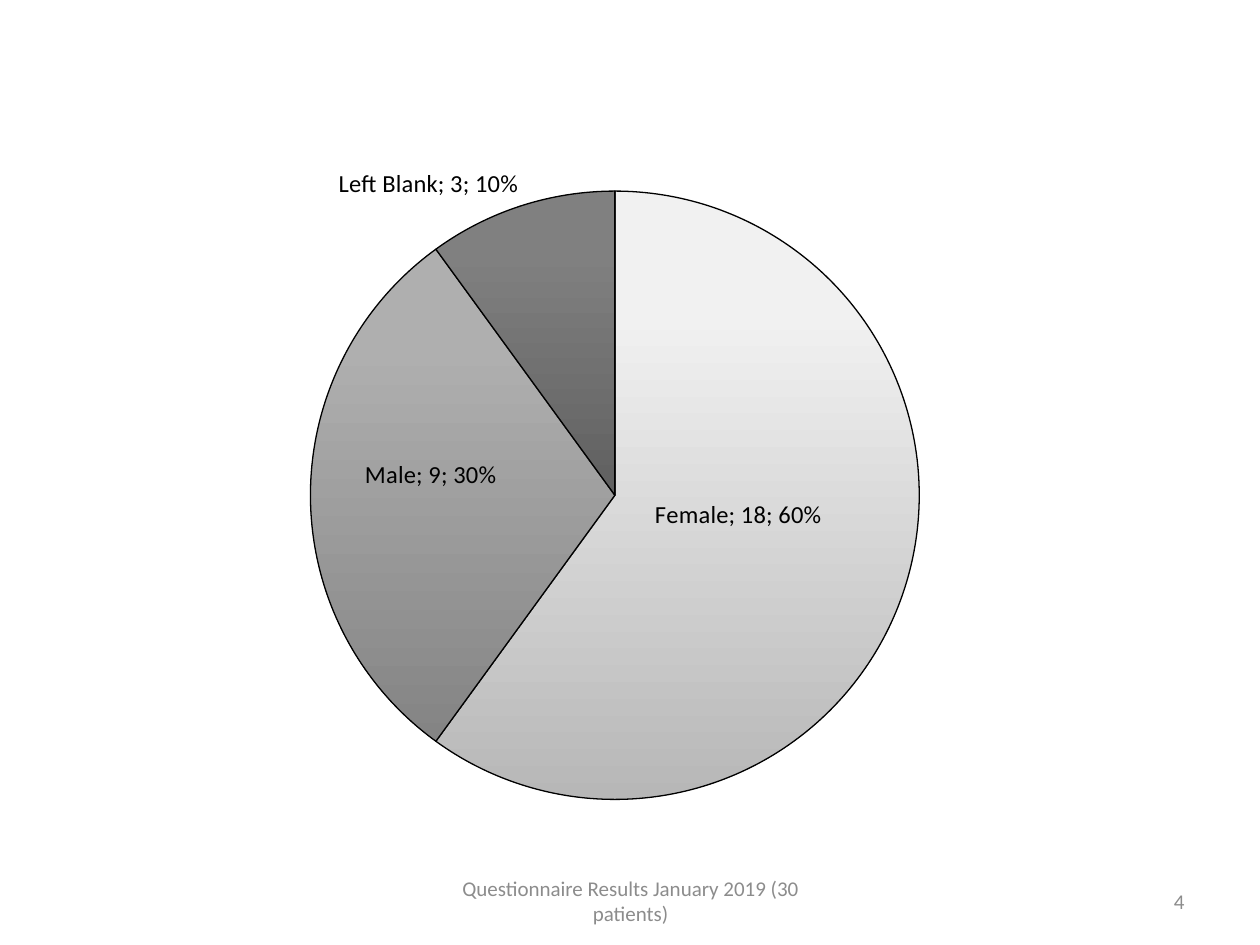
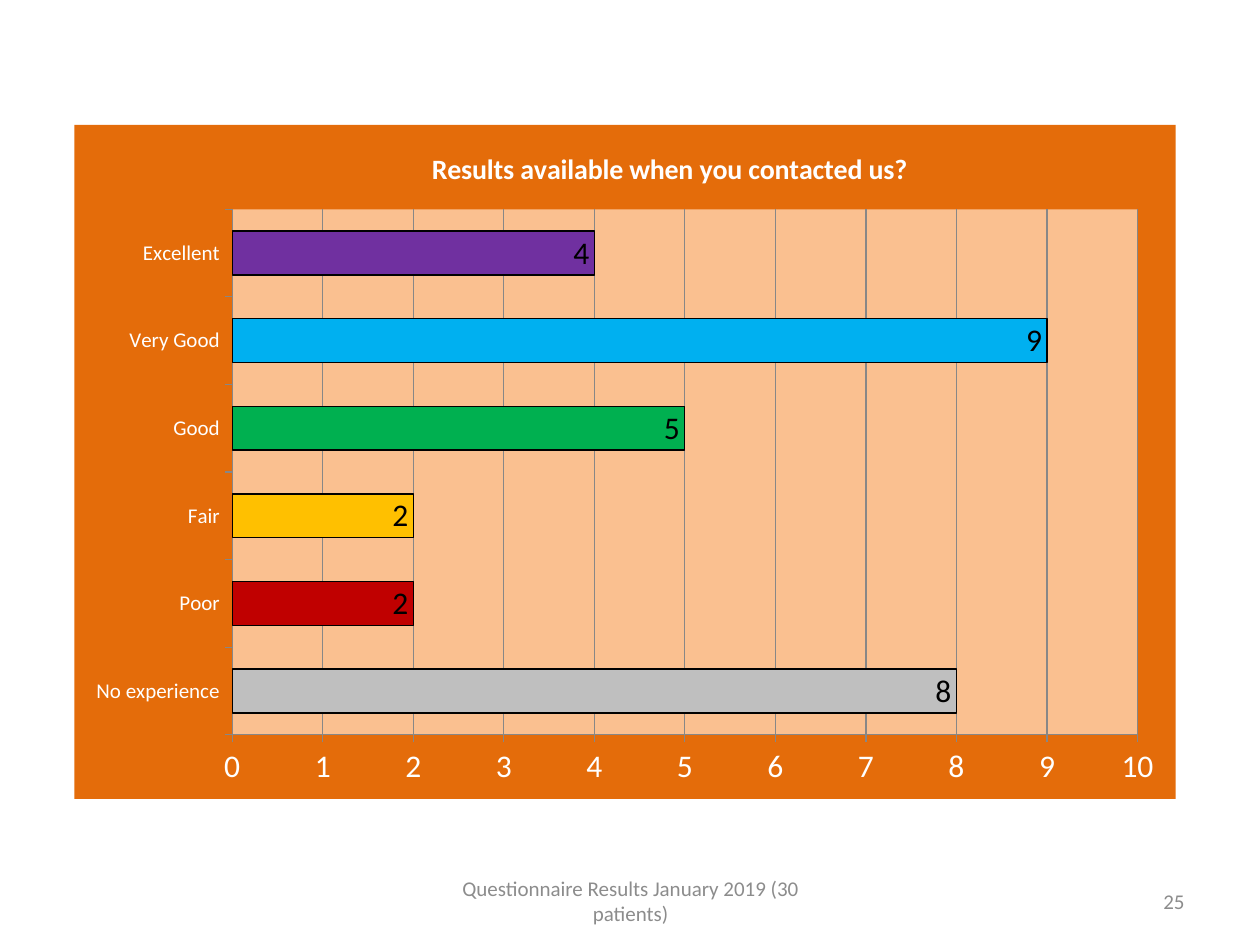
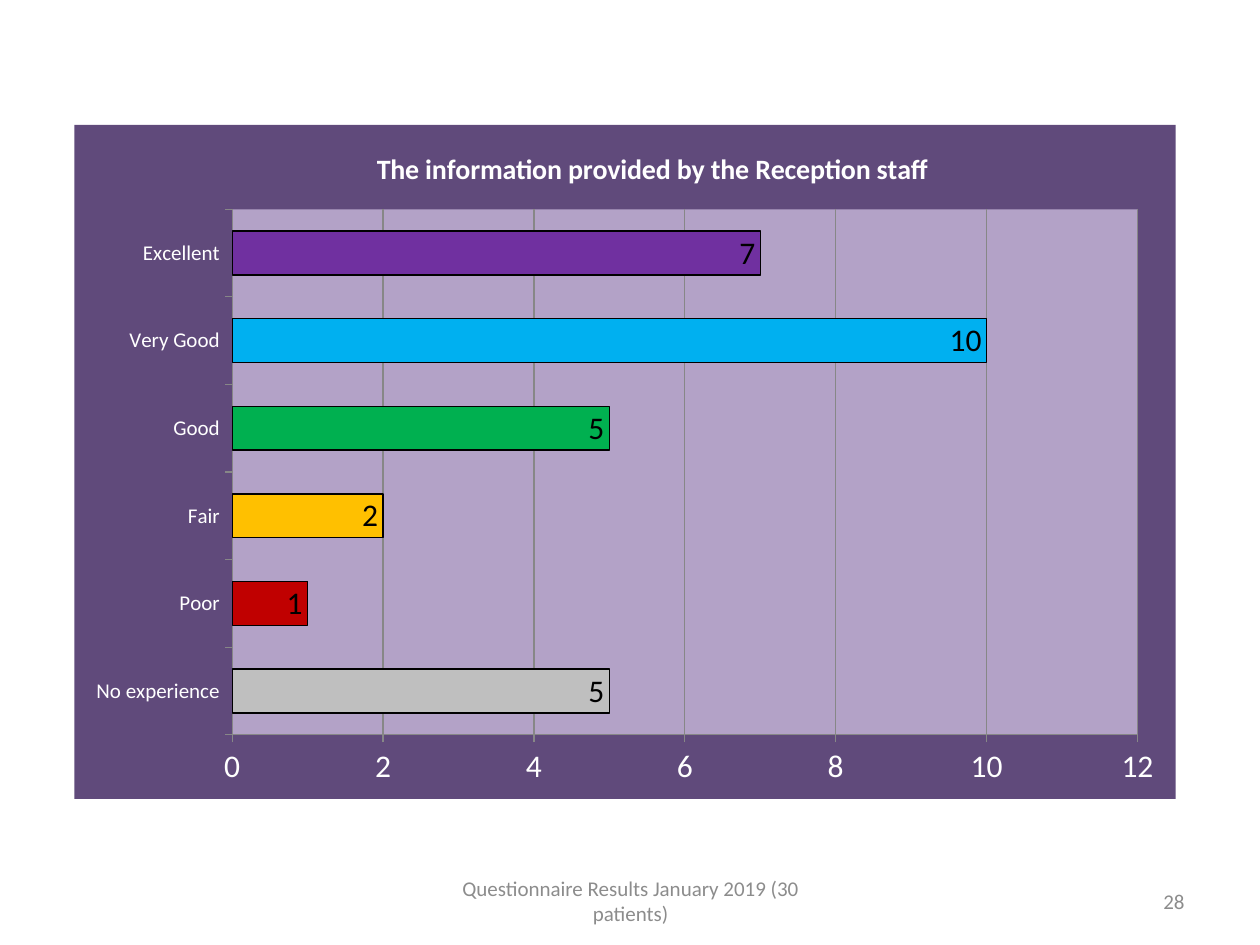
from pptx import Presentation
from pptx.chart.data import CategoryChartData
from pptx.dml.color import RGBColor
from pptx.enum.chart import XL_CHART_TYPE, XL_LABEL_POSITION, XL_TICK_MARK
from pptx.enum.text import MSO_ANCHOR, PP_ALIGN
from pptx.oxml import parse_xml
from pptx.oxml.ns import nsdecls
from pptx.util import Inches, Pt

PIE, BAR = XL_CHART_TYPE.PIE, XL_CHART_TYPE.BAR_CLUSTERED
CENTER_LABEL = XL_LABEL_POSITION.CENTER
INSIDE_END = XL_LABEL_POSITION.INSIDE_END
OUTSIDE_END = XL_LABEL_POSITION.OUTSIDE_END
TICK_OUT = XL_TICK_MARK.OUTSIDE
MIDDLE = MSO_ANCHOR.MIDDLE
CENTER, RIGHT = PP_ALIGN.CENTER, PP_ALIGN.RIGHT

FONT = "Calibri"
BLACK = RGBColor(0x00, 0x00, 0x00)
WHITE = RGBColor(0xFF, 0xFF, 0xFF)
FOOTER_GRAY = RGBColor(0x8C, 0x8C, 0x8C)
AXIS_GRAY = RGBColor(0x87, 0x87, 0x87)
ORANGE = RGBColor(0xE4, 0x6C, 0x0A)
LIGHT_ORANGE = RGBColor(0xFA, 0xC0, 0x90)
PURPLE = RGBColor(0x60, 0x4A, 0x7B)
LIGHT_PURPLE = RGBColor(0xB3, 0xA2, 0xC7)

RATINGS = {
    "No experience": RGBColor(0xBF, 0xBF, 0xBF),
    "Poor": RGBColor(0xC0, 0x00, 0x00),
    "Fair": RGBColor(0xFF, 0xC0, 0x00),
    "Good": RGBColor(0x00, 0xB0, 0x50),
    "Very Good": RGBColor(0x00, 0xB0, 0xF0),
    "Excellent": RGBColor(0x70, 0x30, 0xA0),
}
# name, count, top colour, bottom colour, label position, label offset
SEXES = [
    ("Female", 18, RGBColor(0xF1, 0xF1, 0xF1), RGBColor(0xB7, 0xB7, 0xB7),
     CENTER_LABEL, (-0.02, -0.04)),
    ("Male", 9, RGBColor(0xAF, 0xAF, 0xAF), RGBColor(0x84, 0x84, 0x84),
     CENTER_LABEL, (-0.03, -0.03)),
    ("Left Blank", 3, RGBColor(0x80, 0x80, 0x80), RGBColor(0x60, 0x60, 0x60),
     OUTSIDE_END, None),
]

FOOTER = "Questionnaire Results January 2019 (30 patients)"
FOOTER_BOX = (3.42, 6.95, 3.17, 0.4)
NUMBER_BOX = (7.17, 6.95, 2.33, 0.4)
PIE_BOX = (0.75, 0.92, 8.43, 5.43)
BAR_BOX = (0.59, 0.99, 8.74, 5.35)


def style_font(font, size, color, bold=False):
    font.name, font.size, font.bold = FONT, Pt(size), bold
    font.color.rgb = color


def add_footer_text(slide, box, text, align):
    shape = slide.shapes.add_textbox(*map(Inches, box))
    frame = shape.text_frame
    frame.word_wrap = True
    frame.vertical_anchor = MIDDLE
    frame.text = text
    para = frame.paragraphs[0]
    para.alignment = align
    style_font(para.runs[0].font, 12, FOOTER_GRAY)


def add_numbered_slide(deck, number):
    slide = deck.slides.add_slide(deck.slide_layouts[6])
    add_footer_text(slide, FOOTER_BOX, FOOTER, CENTER)
    add_footer_text(slide, NUMBER_BOX, str(number), RIGHT)
    return slide


def add_plain_chart(slide, kind, box, categories, values):
    data = CategoryChartData()
    data.categories = categories
    data.add_series("Series 1", values)
    chart = slide.shapes.add_chart(kind, *map(Inches, box), data).chart
    chart.has_legend = False
    chart.has_title = False
    style_font(chart.font, 18, BLACK)
    return chart


def outline(point):
    point.format.line.color.rgb = BLACK
    point.format.line.width = Pt(0.75)


def set_layout(parent, after=None, edge=True, target=None, **lengths):
    """Give a chart part a manual layout in fractions of the chart."""
    for old in parent.xpath("c:layout"):
        parent.remove(old)
    parts = f'<c:layoutTarget val="{target}"/>' if target else ""
    if edge:
        parts += '<c:xMode val="edge"/><c:yMode val="edge"/>'
    parts += "".join(f'<c:{name} val="{value}"/>' for name, value in lengths.items())
    layout = parse_xml(f'<c:layout {nsdecls("c")}><c:manualLayout>{parts}'
                       "</c:manualLayout></c:layout>")
    if after:
        parent.xpath(after)[0].addnext(layout)
    else:
        parent.insert(0, layout)


def area_fill(color):
    return parse_xml(f'<c:spPr {nsdecls("c", "a")}><a:solidFill><a:srgbClr val="{color}"/>'
                     "</a:solidFill><a:ln><a:noFill/></a:ln></c:spPr>")


def label_slice(series, index, position, offset):
    """Show category, value and percentage on one slice."""
    label = series.points[index].data_label
    style_font(label.font, 14, BLACK)
    label.position = position
    element = series._element.xpath(f"c:dLbls/c:dLbl[c:idx/@val='{index}']")[0]
    for flag in element.xpath("c:showVal | c:showCatName | c:showPercent"):
        flag.set("val", "1")
    element.append(parse_xml(f'<c:separator {nsdecls("c")}>; </c:separator>'))
    if offset:
        set_layout(element, "c:idx", edge=False, x=offset[0], y=offset[1])


def add_sex_pie(slide, box):
    names, counts = zip(*(sex[:2] for sex in SEXES))
    chart = add_plain_chart(slide, PIE, box, names, counts)
    chart.plots[0].vary_by_categories = True
    set_layout(chart._element.xpath("c:chart/c:plotArea")[0], target="inner",
               x=0.07, y=0.11, w=0.84, h=0.89)
    series = chart.plots[0].series[0]
    for index, (_, _, top, bottom, position, offset) in enumerate(SEXES):
        point = series.points[index]
        fill = point.format.fill
        fill.gradient()
        fill.gradient_angle = 270
        for stop, color, place in zip(fill.gradient_stops, (top, bottom), (0.2, 1)):
            stop.color.rgb, stop.position = color, place
        outline(point)
        label_slice(series, index, position, offset)


def style_axis(axis, size):
    axis.major_tick_mark = TICK_OUT
    axis.format.line.color.rgb = AXIS_GRAY
    style_font(axis.tick_labels.font, size, WHITE)


def add_rating_bars(slide, box, title, title_left, values, step, top, back, plot_back):
    chart = add_plain_chart(slide, BAR, box, list(RATINGS), values)
    chart.has_title = True
    chart.chart_title.include_in_layout = False
    chart.chart_title.text_frame.text = title
    style_font(chart.chart_title.text_frame.paragraphs[0].runs[0].font, 16, WHITE, True)
    set_layout(chart.chart_title._element, "c:tx", x=title_left, y=0.03)

    style_axis(chart.category_axis, 12)
    axis = chart.value_axis
    style_axis(axis, 18)
    axis.minimum_scale, axis.maximum_scale, axis.major_unit = 0, top, step
    axis.has_major_gridlines = True
    axis.major_gridlines.format.line.color.rgb = AXIS_GRAY

    plot = chart.plots[0]
    plot.gap_width = 100
    plot.vary_by_categories = False
    series = plot.series[0]
    for index, color in enumerate(RATINGS.values()):
        point = series.points[index]
        point.format.fill.solid()
        point.format.fill.fore_color.rgb = color
        outline(point)
    labels = series.data_labels
    labels.show_value = True
    labels.position = INSIDE_END
    style_font(labels.font, 18, BLACK)

    chart_part = chart._element.xpath("c:chart")[0]
    chart_part.addnext(area_fill(back))
    chart_part.xpath("c:plotArea")[0].append(area_fill(plot_back))


def main():
    deck = Presentation()
    deck.slide_width, deck.slide_height = Inches(10), Inches(7.5)
    add_sex_pie(add_numbered_slide(deck, 4), PIE_BOX)
    add_rating_bars(add_numbered_slide(deck, 25), BAR_BOX,
                    "Results available when you contacted us?", 0.32,
                    (8, 2, 2, 5, 9, 4), 1, 10, ORANGE, LIGHT_ORANGE)
    add_rating_bars(add_numbered_slide(deck, 28), BAR_BOX,
                    "The information provided by the Reception staff", 0.27,
                    (5, 1, 2, 5, 10, 7), 2, 12, PURPLE, LIGHT_PURPLE)
    deck.save("out.pptx")


if __name__ == "__main__":
    main()
